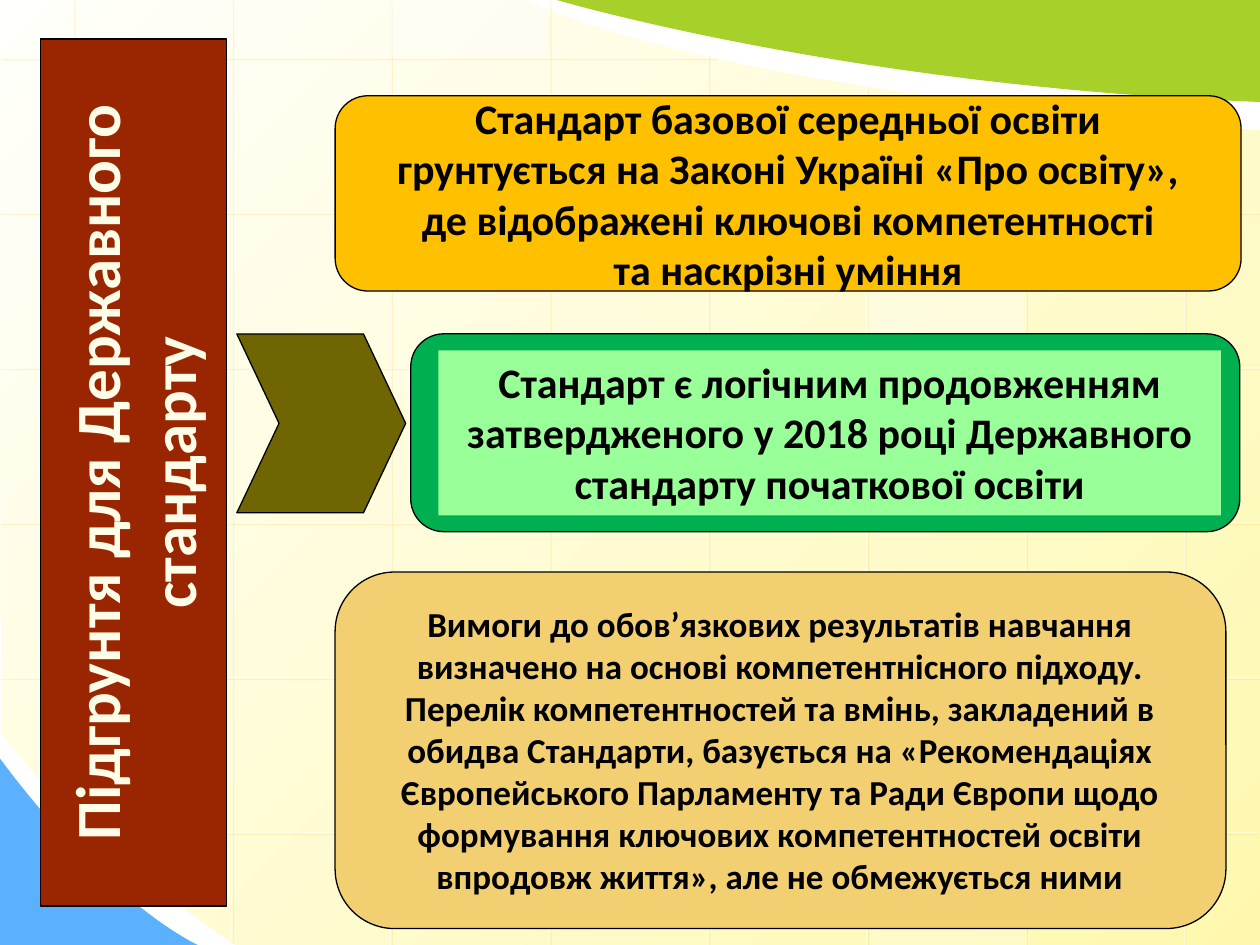
from lxml import etree
from pptx import Presentation
from pptx.dml.color import RGBColor
from pptx.enum.shapes import MSO_CONNECTOR, MSO_SHAPE
from pptx.enum.text import MSO_ANCHOR, MSO_AUTO_SIZE, PP_ALIGN
from pptx.oxml import parse_xml
from pptx.oxml.ns import nsdecls, qn
from pptx.util import Inches, Pt

RECT, ROUND, CHEVRON = MSO_SHAPE.RECTANGLE, MSO_SHAPE.ROUNDED_RECTANGLE, MSO_SHAPE.CHEVRON
STRAIGHT = MSO_CONNECTOR.STRAIGHT
CENTER, MIDDLE, TOP = PP_ALIGN.CENTER, MSO_ANCHOR.MIDDLE, MSO_ANCHOR.TOP
NO_FIT = MSO_AUTO_SIZE.NONE

WHITE = RGBColor(0xFF, 0xFF, 0xFF)
BLACK = RGBColor(0, 0, 0)
IVORY = RGBColor(0xFF, 0xFF, 0xFC)
PALE_YELLOW = RGBColor(0xFE, 0xF8, 0xAF)
SKY = RGBColor(0x5C, 0xB1, 0xFE)
LIME = RGBColor(0xA8, 0xD0, 0x2A)
BRICK = RGBColor(0x99, 0x26, 0x00)
CREAM = RGBColor(0xFF, 0xFD, 0xE8)
OLIVE = RGBColor(0x6F, 0x65, 0x02)
AMBER = RGBColor(0xFF, 0xC0, 0x00)
GREEN = RGBColor(0x00, 0xB0, 0x50)
MINT = RGBColor(0x99, 0xFF, 0x99)
SAND = RGBColor(0xF2, 0xD0, 0x72)
FONT = "Calibri"

TITLE = ["Підгрунтя для Державного", "стандарту"]
LAW = [
    "Стандарт базової середньої освіти",
    "грунтується на Законі Україні «Про освіту»,",
    "де відображені ключові компетентності",
    "та наскрізні уміння",
]
CONTINUITY = [
    "Стандарт є логічним продовженням затвердженого у 2018 році "
    "Державного стандарту початкової освіти"
]
REQUIREMENTS = [
    "Вимоги до обов’язкових результатів навчання визначено на основі "
    "компетентнісного підходу. Перелік компетентностей та вмінь, закладений "
    "в обидва Стандарти, базується на «Рекомендаціях Європейського Парламенту "
    "та Ради Європи щодо формування ключових компетентностей освіти впродовж "
    "життя», але не обмежується ними"
]

PAPER = [(10, 1.04), (10, 7.5), (1.87, 7.5), (0.54, 6.6, 0.01, 5.8, 0.01, 5.81),
         (0, 0), (4.2, 0), (4.2, 0.01, 5.36, 0.69, 10, 1.04)]
CORNER = [(0, 6.02), (0, 7.5), (1.57, 7.5), (1.57, 7.5, 0.86, 7.18, 0, 6.02)]
SWOOSH = [(10, 0.81), (10, 0), (4.42, 0), (4.42, 0, 6.74, 0.69, 10, 0.81)]
COLUMN_SPANS = [(0, 6.46), (0, 7.47), (0, 7.5), (0, 7.5),
                (0.43, 7.5), (0.68, 7.5), (0.85, 7.5), (0.98, 7.5)]
ROW_SPANS = [(0, 5.68), (0, 10), (0, 10), (0, 10), (0, 10), (0.76, 9.97)]
TILES = [(0.6, 4.16, 1.18, 20), (6.9, 6.63, 0.87, 20),
         (3.11, 0, 0.44, 40), (6.89, 1.71, 1.18, 30)]
PANELS = [
    (CHEVRON, (1.88, 2.65, 1.34, 1.42), 0.25, OLIVE, None),
    (ROUND, (2.66, 0.76, 7.19, 1.55), 0.167, AMBER, (LAW, 24, MIDDLE, False)),
    (ROUND, (3.26, 2.65, 6.58, 1.57), 0.167, GREEN, None),
    (ROUND, (2.66, 4.54, 7.07, 2.83), 0.167, SAND, None),
    (RECT, (3.48, 2.78, 6.21, 1.31), None, MINT, (CONTINUITY, 24, TOP, True)),
    (RECT, (2.86, 4.73, 6.66, 2.46), None, SAND, (REQUIREMENTS, 20, TOP, True)),
]


def set_alpha(item, percent):
    color = next(item.iter(qn("a:srgbClr")))
    etree.SubElement(color, qn("a:alpha")).set("val", str(percent * 1000))


def flatten(outline, steps=24):
    points = [outline[0]]
    for part in outline[1:]:
        if len(part) == 2:
            points.append(part)
            continue
        controls = [points[-1], part[:2], part[2:4], part[4:]]
        for step in range(1, steps + 1):
            t = step / steps
            weights = ((1 - t) ** 3, 3 * t * (1 - t) ** 2, 3 * t * t * (1 - t), t ** 3)
            points.append(tuple(sum(w * c[axis] for w, c in zip(weights, controls))
                                for axis in (0, 1)))
    return [(Inches(x), Inches(y)) for x, y in points]


def add_outline(page, outline):
    points = flatten(outline)
    builder = page.shapes.build_freeform(*points[0], scale=1.0)
    builder.add_line_segments(points[1:], close=True)
    shape = builder.convert_to_shape()
    shape.shadow.inherit = False
    shape.line.fill.background()
    return shape


def add_grid_line(page, *ends):
    line = page.shapes.add_connector(STRAIGHT, *map(Inches, ends))
    line.line.color.rgb = WHITE
    line.line.width = Pt(0.75)
    set_alpha(line._element, 50)
    line._element.spPr.append(parse_xml(
        f'<a:effectLst {nsdecls("a")}><a:outerShdw dist="17780" dir="2700000">'
        '<a:srgbClr val="FFC319"><a:alpha val="35000"/></a:srgbClr>'
        '</a:outerShdw></a:effectLst>'))


def add_panel(page, kind, place, color, radius=None):
    shape = page.shapes.add_shape(kind, *map(Inches, place))
    shape.shadow.inherit = False
    paint(shape, color, outlined=radius is not None)
    if radius is not None:
        shape.adjustments[0] = radius
    return shape


def paint(shape, color, outlined):
    shape.fill.solid()
    shape.fill.fore_color.rgb = color
    if outlined:
        shape.line.color.rgb = BLACK
        shape.line.width = Pt(0.75)
    else:
        shape.line.fill.background()


def write(shape, lines, size, anchor, wrap, color=BLACK):
    frame = shape.text_frame
    frame.text = "\n".join(lines)
    frame.word_wrap = wrap
    frame.auto_size = NO_FIT
    frame.vertical_anchor = anchor
    for para in frame.paragraphs:
        para.alignment = CENTER
        para.font.name = FONT
        para.font.size = Pt(size)
        para.font.bold = True
        para.font.color.rgb = color


def add_backdrop(page):
    paper = add_outline(page, PAPER)
    paper.fill.gradient()
    paper.fill.gradient_angle = 315
    for stop, color in zip(paper.fill.gradient_stops, (IVORY, PALE_YELLOW)):
        stop.color.rgb = color
    paint(add_outline(page, CORNER), SKY, False)
    for index, (top, bottom) in enumerate(COLUMN_SPANS):
        x = 0.58 + 1.26 * index
        add_grid_line(page, x, top, x, bottom)
    for index, (left, right) in enumerate(ROW_SPANS):
        y = 0.46 + 1.23 * index
        add_grid_line(page, right, y, left, y)
    for left, top, height, opacity in TILES:
        tile = add_panel(page, RECT, (left, top, 1.23, height), WHITE)
        set_alpha(tile._element.spPr, opacity)
    paint(add_outline(page, SWOOSH), LIME, False)


def place_title(page):
    title = page.shapes.title
    title.left, title.top, title.width, title.height = map(Inches, (-2.38, 3.01, 6.88, 1.48))
    title.rotation = 270
    title._element.spPr.append(parse_xml(
        f'<a:prstGeom {nsdecls("a")} prst="roundRect"><a:avLst>'
        '<a:gd name="adj" fmla="val 16700"/></a:avLst></a:prstGeom>'))
    paint(title, BRICK, True)
    write(title, TITLE, 36, MIDDLE, False, CREAM)
    page.shapes._spTree.append(title._element)


def main():
    deck = Presentation()
    deck.slide_width, deck.slide_height = Inches(10), Inches(7.5)
    page = deck.slides.add_slide(deck.slide_layouts[5])
    add_backdrop(page)
    place_title(page)
    for kind, place, radius, color, content in PANELS:
        panel = add_panel(page, kind, place, color, radius)
        if content:
            write(panel, *content)
    deck.save("out.pptx")


if __name__ == "__main__":
    main()
